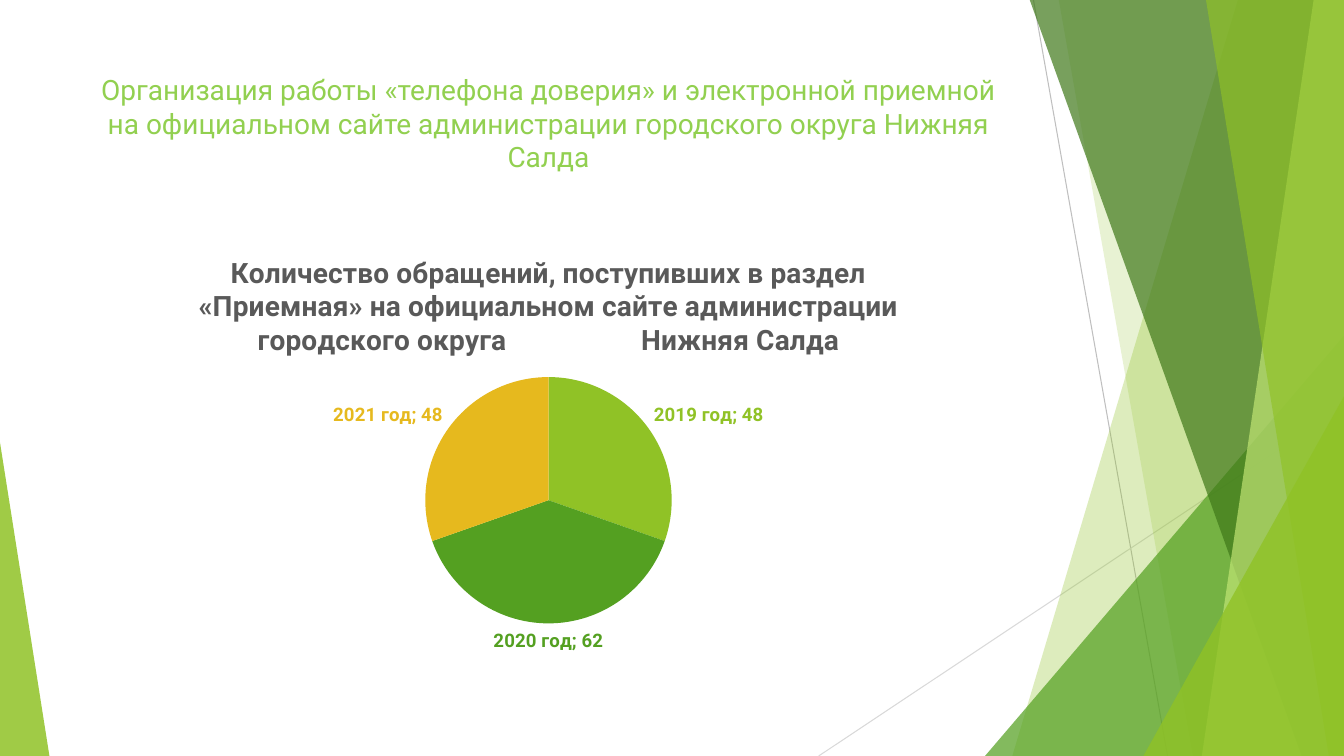
from dataclasses import dataclass

from lxml.etree import SubElement
from pptx import Presentation
from pptx.chart.data import CategoryChartData
from pptx.dml.color import RGBColor
from pptx.enum.chart import XL_CHART_TYPE as ChartType, XL_LABEL_POSITION as LabelPosition
from pptx.enum.shapes import MSO_CONNECTOR as Connector, MSO_SHAPE as Shape
from pptx.enum.text import MSO_ANCHOR as Anchor, MSO_AUTO_SIZE as AutoSize, PP_ALIGN as Align
from pptx.oxml import parse_xml
from pptx.oxml.ns import nsdecls, qn
from pptx.util import Inches, Pt


@dataclass(frozen=True)
class Theme:
    font: str = "Roboto"
    heading: str = "92D050"
    chart_title: str = "595959"
    lime: str = "90C226"
    green: str = "54A021"
    dark_green: str = "3F7819"
    pale_lime: str = "C0E474"
    amber: str = "E6B91E"
    rule_dark: str = "BFBFBF"
    rule_light: str = "D9D9D9"
    heading_size: float = 20
    label_size: float = 13.3


theme = Theme()


def set_font(font, size, color, bold):
    for name, value in {"name": theme.font, "size": Pt(size), "bold": bold}.items():
        setattr(font, name, value)
    font.color.rgb = RGBColor.from_string(color)


def paint(facet, color, opacity):
    facet.shadow.inherit = False
    facet.fill.solid()
    facet.fill.fore_color.rgb = RGBColor.from_string(color)
    facet.line.fill.background()
    tint = facet.fill._xPr.find(qn("a:solidFill"))[0]
    SubElement(tint, qn("a:alpha")).set("val", str(opacity * 1000))


deck = Presentation()
deck.slide_width, deck.slide_height = Inches(13.33), Inches(7.5)
slide = deck.slides.add_slide(deck.slide_layouts[5])
shapes = slide.shapes

# Thin diagonal rules
for x1, y1, x2, y2, color in [
    (10.25, 0, 11.58, 7.5, theme.rule_dark),
    (13.33, 4.03, 8.12, 7.5, theme.rule_light),
]:
    rule = shapes.add_connector(
        Connector.STRAIGHT, Inches(x1), Inches(y1), Inches(x2), Inches(y2))
    rule.line.color.rgb = RGBColor.from_string(color)
    rule.line.width = Pt(0.75)
    SubElement(rule._element.spPr, qn("a:effectLst"))

# Translucent facets, back to front: bands run from a top x to a bottom x,
# keeping to the right edge; triangles have a box and an apex position
facets = [
    ("band", (12.28, 10.04), theme.lime, 30),
    ("band", (10.5, 11.83), theme.lime, 20),
    ("triangle", (9.77, 3.33, 3.56, 4.17, 1), theme.green, 72),
    ("band", (10.21, 12.91), theme.dark_green, 70),
    ("band", (13.03, 11.92), theme.pale_lime, 70),
    ("band", (11.96, 13.18), theme.lime, 65),
    ("triangle", (11.34, 3.93, 1.99, 3.57, 1), theme.lime, 80),
    ("triangle", (0, 4.39, 0.49, 3.11, 0), theme.lime, 85),
]
for kind, geometry, color, opacity in facets:
    if kind == "band":
        top_x, bottom_x = geometry
        outline = shapes.build_freeform(Inches(top_x), Inches(-0.01))
        outline.add_line_segments(
            [(Inches(x), Inches(y))
             for x, y in [(13.33, -0.01), (13.33, 7.5), (bottom_x, 7.5)]], close=True)
        facet = outline.convert_to_shape()
    else:
        *box, apex = geometry
        facet = shapes.add_shape(Shape.ISOSCELES_TRIANGLE, *map(Inches, box))
        facet.adjustments[0] = apex
    paint(facet, color, opacity)

# Slide title
heading = shapes.title
for name, value in {"left": 0.74, "top": 0.67, "width": 9.4, "height": 1.44}.items():
    setattr(heading, name, Inches(value))
heading_frame = heading.text_frame
for name, value in {"word_wrap": True, "auto_size": AutoSize.NONE,
                    "vertical_anchor": Anchor.TOP}.items():
    setattr(heading_frame, name, value)
heading_line = heading_frame.paragraphs[0]
heading_line.alignment = Align.CENTER
heading_text = heading_line.add_run()
heading_text.text = ("Организация работы «телефона доверия» и электронной приемной "
                     "на официальном сайте администрации городского округа Нижняя Салда")
set_font(heading_text.font, theme.heading_size, theme.heading, False)

# Pie of requests by year
requests = {
    "2019 год": (48, theme.lime),
    "2020 год": (62, theme.green),
    "2021 год": (48, theme.amber),
}
data = CategoryChartData()
data.categories = list(requests)
data.add_series("Обращения", [count for count, color in requests.values()])
pie = shapes.add_chart(
    ChartType.PIE, Inches(0.74), Inches(2.36), Inches(9.4), Inches(4.24), data).chart
pie.has_legend = False
pie.font.name = theme.font
pie.plots[0].vary_by_categories = True

# Chart title: one widely spaced blank sets off the town name
pie.has_title = True
title_line = pie.chart_title.text_frame.paragraphs[0]
title_line.alignment = Align.CENTER
for text, spacing in [
    ("Количество обращений, поступивших в раздел «Приемная» "
     "на официальном сайте администрации городского округа", 0),
    (" ", 9100),
    ("Нижняя Салда", 0),
]:
    title_part = title_line.add_run()
    title_part.text = text
    set_font(title_part.font, theme.heading_size, theme.chart_title, True)
    title_part.font._element.set("spc", str(spacing))
pie.chart_title.include_in_layout = False

# Slices and their labels
slices = pie.plots[0].series[0]
for index, (count, color) in enumerate(requests.values()):
    point = slices.points[index]
    point.format.fill.solid()
    point.format.fill.fore_color.rgb = RGBColor.from_string(color)
    point.format.line.fill.background()
    set_font(point.data_label.font, theme.label_size, color, True)
    point.data_label.position = LabelPosition.OUTSIDE_END
for label in slices._element.iter(qn("c:dLbl")):
    label.find(qn("c:showCatName")).set("val", "1")
    SubElement(label, qn("c:separator")).text = "; "

# Fixed place of the pie inside the chart
plot_area = pie._chartSpace.chart.plotArea
for old_layout in plot_area.findall(qn("c:layout")):
    plot_area.remove(old_layout)
place = {"x": 0.37, "y": 0.325, "w": 0.26, "h": 0.578}
plot_area.insert(0, parse_xml(
    f'<c:layout {nsdecls("c")}><c:manualLayout><c:layoutTarget val="inner"/>'
    '<c:xMode val="edge"/><c:yMode val="edge"/>'
    + "".join(f'<c:{side} val="{share}"/>' for side, share in place.items())
    + "</c:manualLayout></c:layout>"))

deck.save("out.pptx")
